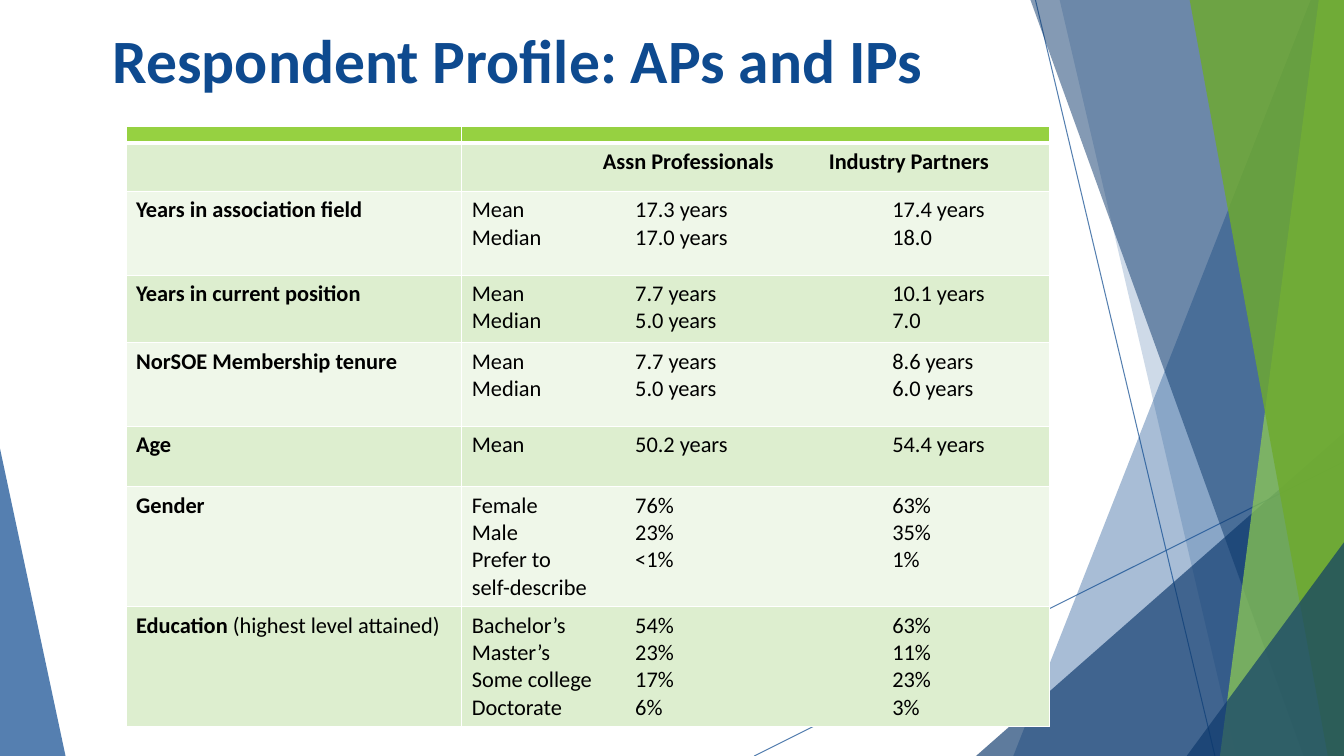
from lxml import etree
from pptx import Presentation
from pptx import util as u
from pptx.dml.color import RGBColor
from pptx.enum import shapes, text
from pptx.oxml import parse_xml
from pptx.oxml.ns import qn

NS = 'xmlns:a="http://schemas.openxmlformats.org/drawingml/2006/main"'
BLUE, NAVY, LIME, GREEN = "0E4A8F", "0B376B", "92D050", "6EAA2E"


def paint(fill, color, alpha=100):
    """Give a fill a solid colour with an opacity in percent."""
    fill.solid()
    fill.fore_color.rgb = RGBColor.from_string(color)
    if alpha < 100:
        tone = fill._xPr.find(qn("a:solidFill"))[0]
        etree.SubElement(tone, qn("a:alpha"), val=str(alpha * 1000))


def write(par, words, size=16, color="000000", bold=False):
    run = par.add_run()
    run.text = words
    run.font.name = "Calibri"
    run.font.size = u.Pt(size)
    run.font.bold = bold
    run.font.color.rgb = RGBColor.from_string(color)


deck = Presentation()
deck.slide_width, deck.slide_height = u.Inches(13.33), u.Inches(7.5)
slide = deck.slides.add_slide(deck.slide_layouts[6])

# Backdrop: translucent facets, with two thin lines above the first
facets = [
    (BLUE, 70, [(0, 4.45), (0.65, 7.5), (0, 7.5)]),
    (BLUE, 36, [(13, 0), (10.05, 7.5), (13.33, 7.5), (13.33, 0)]),
    (BLUE, 20, [(10.51, 0), (12.26, 7.5), (13.33, 7.5), (13.33, 0)]),
    (NAVY, 66, [(9.68, 7.5), (13.33, 4.29), (13.33, 7.5)]),
    (NAVY, 50, [(10.22, 0), (12.93, 7.5), (13.33, 7.5), (13.33, 0)]),
    (LIME, 70, [(13.08, 0), (12.1, 7.5), (13.33, 7.5), (13.33, 0)]),
    (GREEN, 82, [(11.8, 0), (13.17, 7.5), (13.33, 7.5), (13.33, 0)]),
    (NAVY, 66, [(11.77, 7.5), (13.33, 5.38), (13.33, 7.5)]),
]
rays = [(7.48, 7.5, 13.33, 4.58), (10.27, 0, 12.05, 7.5)]

for i, (color, alpha, spots) in enumerate(facets):
    spots = [(u.Inches(x), u.Inches(y)) for x, y in spots]
    pen = slide.shapes.build_freeform(*spots[0])
    pen.add_line_segments(spots[1:], close=True)
    facet = pen.convert_to_shape()
    facet.shadow.inherit = False
    facet.line.fill.background()
    paint(facet.fill, color, alpha)
    if i == 0:
        for ends in rays:
            ray = slide.shapes.add_connector(
                shapes.MSO_CONNECTOR.STRAIGHT, *[u.Inches(n) for n in ends])
            ray.line.width = u.Pt(0.75)
            paint(ray.line.fill, BLUE, 70)
            etree.SubElement(ray._element.spPr, qn("a:effectLst"))

# Title
title = slide.shapes.add_textbox(
    u.Inches(0), u.Inches(0.12), u.Inches(10.28), u.Inches(0.92)).text_frame
title.word_wrap = True
title.vertical_anchor = text.MSO_ANCHOR.MIDDLE
title.paragraphs[0].alignment = text.PP_ALIGN.CENTER
write(title.paragraphs[0], "Respondent Profile: APs and IPs", 44, BLUE, True)

# Table: height, bold label, plain label, lines with tabs between values
rows = [
    (0.17, "", "", []),
    (0.48, "", "", ["\tAssn Professionals\tIndustry Partners"]),
    (0.83, "Years in association field", "",
     ["Mean\t17.3 years\t17.4 years", "Median\t17.0 years\t18.0"]),
    (0.67, "Years in current position", "",
     ["Mean\t7.7 years\t10.1 years", "Median\t5.0 years\t7.0"]),
    (0.83, "NorSOE Membership tenure", "",
     ["Mean\t7.7 years\t8.6 years", "Median\t5.0 years\t6.0 years"]),
    (0.6, "Age", "", ["Mean\t50.2 years\t54.4 years"]),
    (1.19, "Gender", "", ["Female\t76%\t63%", "Male\t23%\t35%",
                          "Prefer to\t<1%\t1%", "self-describe"]),
    (1.19, "Education ", "(highest level attained)",
     ["Bachelor’s\t54%\t63%", "Master’s\t23%\t11%",
      "Some college\t17%\t23%", "Doctorate\t6%\t3%"]),
]
high = sum(row[0] for row in rows)
table = slide.shapes.add_table(
    len(rows), 2, u.Inches(1.25), u.Inches(1.25),
    u.Inches(9.16), u.Inches(high)).table
table.columns[0].width, table.columns[1].width = u.Inches(3.33), u.Inches(5.83)

for r, (tall, label, note, lines) in enumerate(rows):
    table.rows[r].height = u.Inches(tall)
    shade = "96D141" if r == 0 else "DDEECF" if r % 2 else "EFF7E9"
    for cell in table.rows[r].cells:
        props = cell._tc.get_or_add_tcPr()
        for side in "LRTB":
            thick = 3 if (r, side) in [(0, "B"), (1, "T")] else 1
            props.append(parse_xml(
                f'<a:ln{side} {NS} w="{u.Pt(thick)}"><a:solidFill>'
                f'<a:srgbClr val="FFFFFF"/></a:solidFill></a:ln{side}>'))
        paint(cell.fill, shade)
        if r == 0:
            cell.margin_top = cell.margin_bottom = 0
            end = cell.text_frame.paragraphs[0]._p
            etree.SubElement(end, qn("a:endParaRPr"), sz="600")
    name, data = table.cell(r, 0).text_frame, table.cell(r, 1).text_frame
    if label:
        write(name.paragraphs[0], label, bold=True)
    if note:
        write(name.paragraphs[0], note)
    stops = (1.3, 3.54) if r == 1 else (1.62, 4.17)
    for i, line in enumerate(lines):
        par = data.paragraphs[0] if i == 0 else data.add_paragraph()
        tabs = etree.SubElement(par._p.get_or_add_pPr(), qn("a:tabLst"))
        for stop in stops:
            etree.SubElement(tabs, qn("a:tab"), pos=str(u.Inches(stop)), algn="l")
        write(par, line, bold=r == 1)

deck.save("out.pptx")
